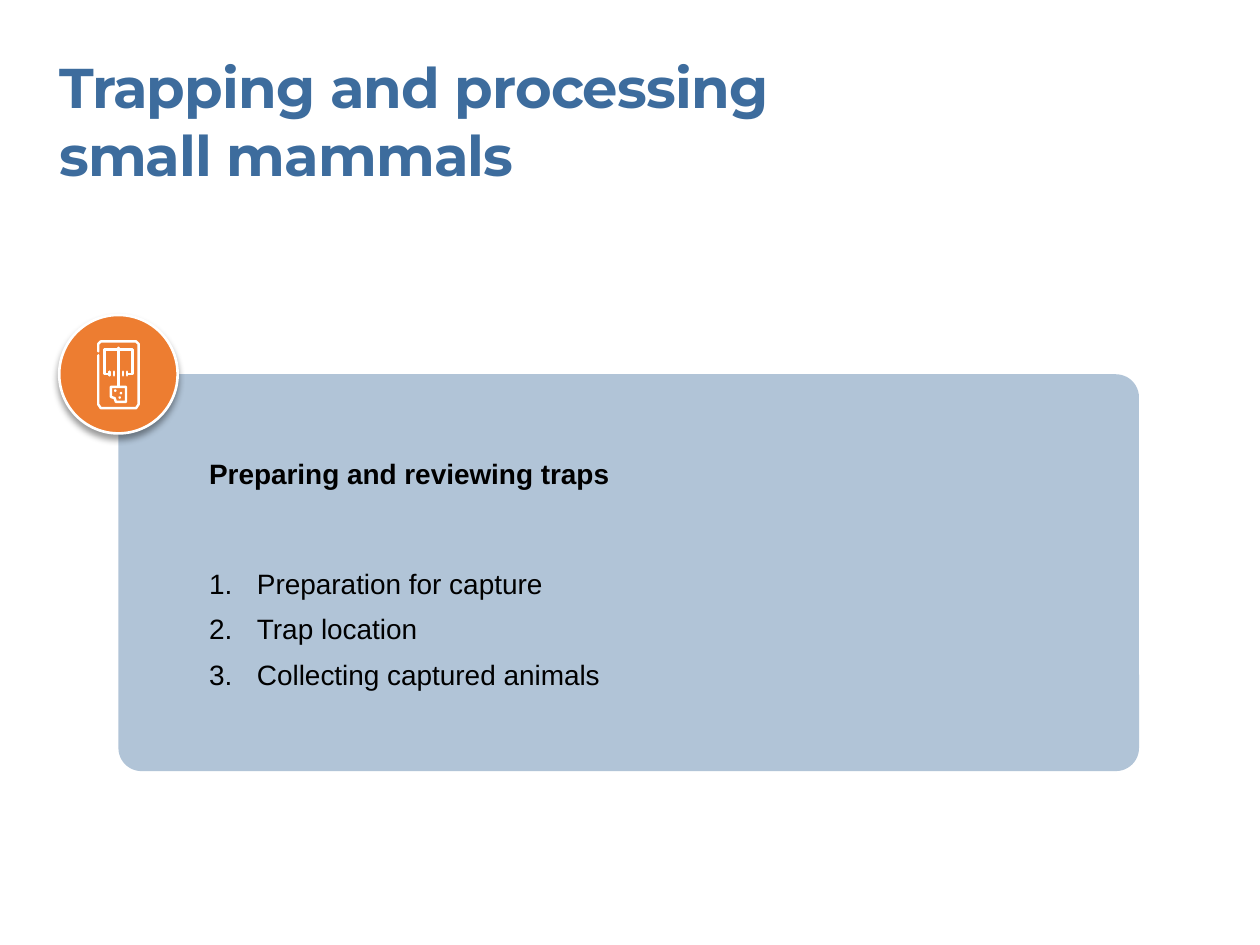
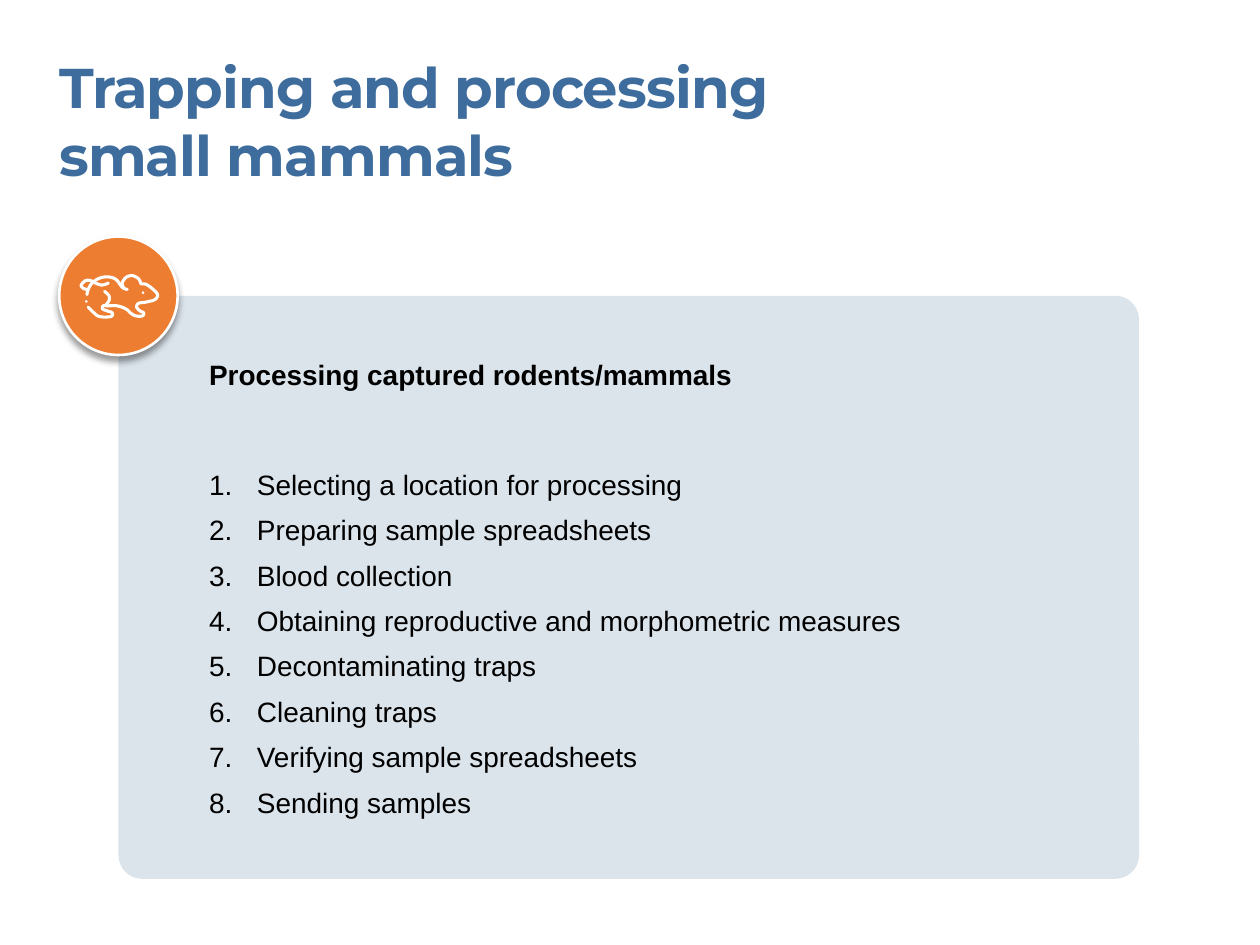
import dataclasses

import lxml.etree
import pptx
import pptx.dml.color
import pptx.enum.shapes
import pptx.enum.text
import pptx.oxml.ns
import pptx.util

Pt = pptx.util.Pt
Inches = pptx.util.Inches
rgb = pptx.dml.color.RGBColor.from_string
qn = pptx.oxml.ns.qn
Kind = pptx.enum.shapes.MSO_SHAPE


@dataclasses.dataclass(frozen=True)
class Theme:
    blue: str = "3D6C9D"
    pale: str = "DBE4EB"
    orange: str = "ED7D31"
    white: str = "FFFFFF"
    black: str = "000000"
    title_font: str = "Montserrat"
    body_font: str = "Arial"
    title_size: int = 32
    body_size: int = 16


theme = Theme()

# Icon strokes and dots are in hundredths of an inch from the badge centre.
TRAP = {
    "curved": False,
    "line": 1.4,
    "strokes": [
        [(-16, -18), (-16, -24), (-14, -26), (14, -26), (16, -24), (16, 24),
         (14, 27), (-14, 27), (-16, 24), (-16, -15)],
        [(-7, 0), (-11, 0), (-11, -19.5), (11, -19.5), (11, 0), (7, 0)],
        [(0, -21), (0, 10)],
        [(-6, 10), (6, 10), (6, 22), (-2, 22), (-3, 19), (-6, 18), (-6, 10)],
    ] + [[(x, -2), (x, 1)] for x in (-7, -3.5, 3.5, 7)],
    "dots": [(-2.5, 13), (2, 15), (1, 18.5)],
}
RODENT = {
    "curved": True,
    "line": 1.75,
    "strokes": [
        # back
        [(-25, -1), (-24, -5), (-21, -10), (-15, -14), (-8, -15), (-2, -13),
         (2, -8), (4, -6), (7, -5)],
        # tail
        [(-8, -10), (-13, -8.5), (-18, -10), (-22, -12), (-26, -12),
         (-29.5, -8.5), (-28, -6), (-25, -5)],
        # ear
        [(4, -7), (3, -10), (6, -14.5), (11, -16), (16, -13.5), (18, -9.5)],
        # head, belly and feet
        [(18, -9.5), (22, -9), (27, -5.5), (31, -1), (29, 3), (22, 5),
         (16, 6), (14.5, 9), (17, 12), (20, 13.5), (19, 16), (14, 16),
         (10, 14), (6, 10.5), (-1, 8), (-8, 8), (-12, 8), (-12.5, 10.5),
         (-9, 12), (-5, 13.5), (-6, 16.5), (-15, 16.5), (-20, 13), (-24, 9)],
        # haunch
        [(-11, -3.5), (-7.5, 0), (-7.5, 4), (-10.5, 8)],
    ],
    "dots": [(-25.5, 4.5), (19.5, -2.5)],
}

PAGES = [
    {
        "heading": "Preparing and reviewing traps",
        "steps": ["Preparation for capture", "Trap location",
                  "Collecting captured animals"],
        "top": 0.396, "height": 0.42, "fill": theme.blue, "opacity": 40,
        "icon": TRAP,
    },
    {
        "heading": "Processing captured rodents/mammals",
        "steps": ["Selecting a location for processing",
                  "Preparing sample spreadsheets",
                  "Blood collection",
                  "Obtaining reproductive and morphometric measures",
                  "Decontaminating traps",
                  "Cleaning traps",
                  "Verifying sample spreadsheets",
                  "Sending samples"],
        "top": 0.313, "height": 0.617, "fill": theme.pale, "opacity": 100,
        "icon": RODENT,
    },
]


def smooth(points, steps=6):
    """Return points along a Catmull-Rom curve through the given points."""
    padded = [points[0], *points, points[-1]]
    curve = []
    for a, b, c, d in zip(padded, padded[1:], padded[2:], padded[3:]):
        for step in range(steps):
            t = step / steps
            curve.append(tuple(
                b[i] + t / 2 * (c[i] - a[i]
                                + t * (2 * a[i] - 5 * b[i] + 4 * c[i] - d[i])
                                + t * t * (3 * (b[i] - c[i]) + d[i] - a[i]))
                for i in (0, 1)))
    return curve + [points[-1]]


def add_text_box(page, left, top, width, height, font_name):
    """Add a wrapping text box without margins and return its text frame."""
    frame = page.shapes.add_textbox(left, top, width, height).text_frame
    frame.word_wrap = True
    frame.margin_left = frame.margin_right = 0
    frame.margin_top = frame.margin_bottom = 0
    frame.paragraphs[0].font.name = font_name
    return frame


deck = pptx.Presentation()
deck.slide_width = Inches(10)
deck.slide_height = Inches(7.5)
W, H = deck.slide_width, deck.slide_height
margin = int(W * 0.047)
panel_left = 2 * margin
badge_size = 2 * margin
hundredth = Inches(0.01)

for content in PAGES:
    page = deck.slides.add_slide(deck.slide_layouts[6])

    frame = add_text_box(page, margin, int(H * 0.056), int(W * 0.68),
                         int(H * 0.144), theme.title_font)
    para = frame.paragraphs[0]
    span = para.add_run()
    span.text = "Trapping and processing small mammals"
    span.font.name = theme.title_font
    span.font.size = Pt(theme.title_size)
    span.font.bold = True
    span.font.color.rgb = rgb(theme.blue)
    span.font._element.set("spc", "-50")

    panel_top = int(H * content["top"])
    panel_height = int(H * content["height"])
    panel = page.shapes.add_shape(Kind.ROUNDED_RECTANGLE, panel_left, panel_top,
                                  int(W * 0.81), panel_height)
    panel.adjustments[0] = Inches(0.19) / panel_height * 0.9 + 0.004
    panel.shadow.inherit = False
    panel.line.fill.background()
    panel.fill.solid()
    panel.fill.fore_color.rgb = rgb(content["fill"])
    if content["opacity"] < 100:
        colour = panel._element.spPr.find(".//" + qn("a:srgbClr"))
        lxml.etree.SubElement(colour, qn("a:alpha"),
                              val=str(content["opacity"] * 1000))

    # The badge is centred on the panel's top left corner.
    badge = page.shapes.add_shape(Kind.OVAL, margin, panel_top - margin,
                                  badge_size, badge_size)
    badge.fill.solid()
    badge.fill.fore_color.rgb = rgb(theme.orange)
    badge.line.color.rgb = rgb(theme.white)
    badge.line.width = Pt(1.5)
    badge.shadow.inherit = False
    effects = badge._element.spPr.find(qn("a:effectLst"))
    shadow = lxml.etree.SubElement(
        effects, qn("a:outerShdw"), blurRad=str(Pt(4)), dist=str(Pt(3)),
        dir="5400000", algn="t", rotWithShape="0")
    colour = lxml.etree.SubElement(shadow, qn("a:srgbClr"), val=theme.black)
    lxml.etree.SubElement(colour, qn("a:alpha"), val="40000")

    icon = content["icon"]
    group = page.shapes.add_group_shape()
    for stroke in icon["strokes"]:
        points = smooth(stroke) if icon["curved"] else stroke
        places = [(int(panel_left + x * hundredth), int(panel_top + y * hundredth))
                  for x, y in points]
        builder = group.shapes.build_freeform(*places[0])
        builder.add_line_segments(places[1:], close=False)
        outline = builder.convert_to_shape()
        outline.shadow.inherit = False
        outline.fill.background()
        outline.line.color.rgb = rgb(theme.white)
        outline.line.width = Pt(icon["line"])
        outline.line._get_or_add_ln().set("cap", "rnd")
    for x, y in icon["dots"]:
        dot = group.shapes.add_shape(
            Kind.OVAL, int(panel_left + (x - 1) * hundredth),
            int(panel_top + (y - 1) * hundredth), 2 * hundredth, 2 * hundredth)
        dot.shadow.inherit = False
        dot.fill.solid()
        dot.fill.fore_color.rgb = rgb(theme.white)
        dot.line.fill.background()

    frame = add_text_box(page, int(W * 0.166), panel_top, int(W * 0.666),
                         panel_height, theme.body_font)
    frame.vertical_anchor = pptx.enum.text.MSO_ANCHOR.MIDDLE
    for index, text in enumerate([content["heading"], *content["steps"]]):
        para = frame.add_paragraph() if index else frame.paragraphs[0]
        para.text = text
        para.font.name = theme.body_font
        para.font.size = Pt(theme.body_size)
        para.font.bold = index == 0
        para.font.color.rgb = rgb(theme.black)
        para.line_spacing = 1.04
        para.space_after = Pt(6 if index else 43)
        if index:
            properties = para._element.get_or_add_pPr()
            properties.set("marL", str(Inches(0.38)))
            properties.set("indent", str(-Inches(0.38)))
            number = lxml.etree.Element(qn("a:buAutoNum"), type="arabicPeriod")
            properties.find(qn("a:defRPr")).addprevious(number)

deck.save("out.pptx")
